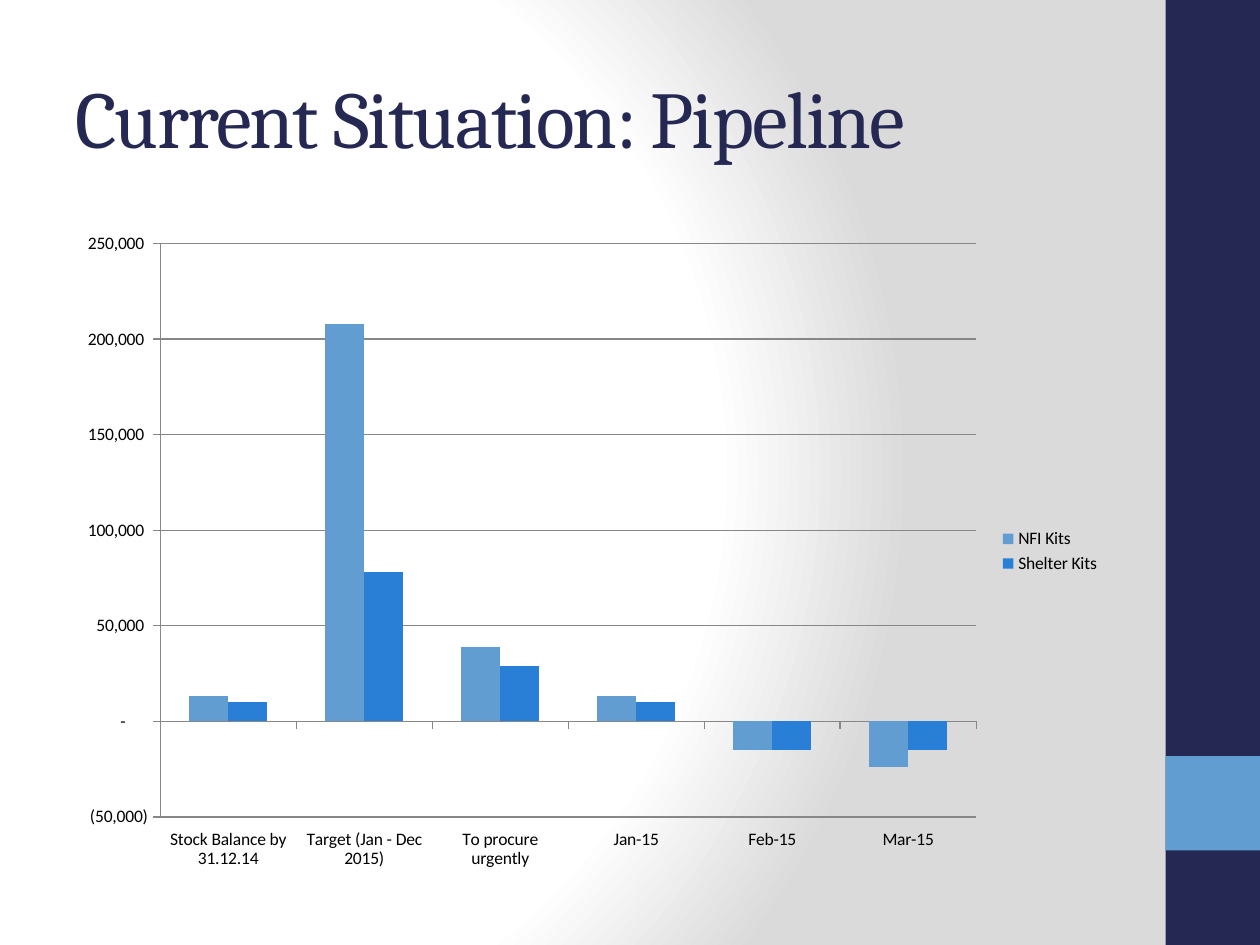
from dataclasses import dataclass

from pptx import Presentation, oxml
from pptx import util as u
from pptx.chart import data
from pptx.dml.color import RGBColor
from pptx.enum import chart as charts, shapes, text
from pptx.oxml import ns


@dataclass(frozen=True)
class Theme:
    navy: str = "242852"
    sky: str = "629DD1"
    blue: str = "297FD5"
    axis: str = "878787"
    black: str = "000000"
    white: str = "FFFFFF"
    grey: str = "DADADA"
    title_font: str = "Cambria"
    chart_font: str = "Calibri"
    title_size: float = 46
    chart_size: float = 10
    line_width: float = 0.75


@dataclass(frozen=True)
class Area:
    left: float
    top: float
    width: float
    height: float

    def lengths(self) -> tuple:
        return tuple(u.Pt(n) for n in (self.left, self.top, self.width, self.height))


@dataclass(frozen=True)
class Band:
    area: Area
    color: str


@dataclass(frozen=True)
class KitSeries:
    name: str
    values: tuple
    color: str


THEME = Theme()
PAGE = Area(0, 0, 720, 540)
TITLE = Area(36, 21.6, 600, 90)
CHART = Area(36, 126, 600, 378)
BANDS = (
    Band(Area(666, 0, 54, 540), THEME.navy),
    Band(Area(666, 432, 54, 54), THEME.sky),
)
CATEGORIES = ("Stock Balance by 31.12.14", "Target (Jan - Dec 2015)",
              "To procure urgently", "Jan-15", "Feb-15", "Mar-15")
KITS = (
    KitSeries("NFI Kits", (13000, 208000, 39000, 13000, -15000, -24000), THEME.sky),
    KitSeries("Shelter Kits", (10000, 78000, 29000, 10000, -15000, -15000), THEME.blue),
)
NUMBER_FORMAT = r'_(* #,##0_);_(* \(#,##0\);_(* "-"??_);_('


def rgb(value: str) -> RGBColor:
    return RGBColor.from_string(value)


def set_background(page) -> None:
    """Fill the page with a circular gradient, which needs XML."""
    stops = "".join(
        f'<a:gs pos="{percent * 1000}"><a:srgbClr val="{color}"/></a:gs>'
        for percent, color in ((0, THEME.white), (75, THEME.white), (100, THEME.grey)))
    page.element.cSld.insert(0, oxml.parse_xml(
        f'<p:bg {ns.nsdecls("p", "a")}><p:bgPr><a:gradFill rotWithShape="1">'
        f'<a:gsLst>{stops}</a:gsLst><a:path path="circle">'
        '<a:fillToRect l="20000" t="50000" r="100000" b="50000"/></a:path>'
        '</a:gradFill><a:effectLst/></p:bgPr></p:bg>'))


def add_band(page, band: Band) -> None:
    box = page.shapes.add_shape(shapes.MSO_SHAPE.RECTANGLE, *band.area.lengths())
    box.shadow.inherit = False
    box.fill.solid()
    box.fill.fore_color.rgb = rgb(band.color)
    box.line.fill.background()


def add_title(page, words: str) -> None:
    frame = page.shapes.add_textbox(*TITLE.lengths()).text_frame
    frame.word_wrap = True
    frame.vertical_anchor = text.MSO_ANCHOR.MIDDLE
    frame.text = words
    span = frame.paragraphs[0].runs[0]
    span.font.name = THEME.title_font
    span.font.size = u.Pt(THEME.title_size)
    span.font.color.rgb = rgb(THEME.navy)
    span.font._element.set("spc", "-100")


def style_line(line) -> None:
    line.color.rgb = rgb(THEME.axis)
    line.width = u.Pt(THEME.line_width)


def add_kit_chart(page) -> None:
    chart_data = data.CategoryChartData(number_format="#,##0")
    chart_data.categories = CATEGORIES
    for kit in KITS:
        chart_data.add_series(kit.name, kit.values)
    chart = page.shapes.add_chart(
        charts.XL_CHART_TYPE.COLUMN_CLUSTERED, *CHART.lengths(), chart_data).chart
    chart.has_title = False
    chart.font.name = THEME.chart_font
    chart.font.size = u.Pt(THEME.chart_size)
    chart.font.color.rgb = rgb(THEME.black)
    chart.has_legend = True
    chart.legend.position = charts.XL_LEGEND_POSITION.RIGHT
    chart.legend.include_in_layout = False

    plot = chart.plots[0]
    plot.gap_width = 150
    plot.overlap = 0
    plot.vary_by_categories = False
    for series, kit in zip(plot.series, KITS):
        series.invert_if_negative = False
        series.format.fill.solid()
        series.format.fill.fore_color.rgb = rgb(kit.color)

    for axis in (chart.category_axis, chart.value_axis):
        axis.major_tick_mark = charts.XL_TICK_MARK.OUTSIDE
        axis.minor_tick_mark = charts.XL_TICK_MARK.NONE
        style_line(axis.format.line)
    chart.category_axis.tick_label_position = charts.XL_TICK_LABEL_POSITION.LOW
    values = chart.value_axis
    values.minimum_scale, values.maximum_scale, values.major_unit = -50000, 250000, 50000
    values.has_major_gridlines = True
    style_line(values.major_gridlines.format.line)
    values.tick_labels.number_format = NUMBER_FORMAT
    values.tick_labels.number_format_is_linked = False


def main() -> None:
    deck = Presentation()
    deck.slide_width, deck.slide_height = u.Pt(PAGE.width), u.Pt(PAGE.height)
    page = deck.slides.add_slide(deck.slide_layouts[6])
    set_background(page)
    for band in BANDS:
        add_band(page, band)
    add_title(page, "Current Situation: Pipeline")
    add_kit_chart(page)
    deck.save("out.pptx")


if __name__ == "__main__":
    main()
